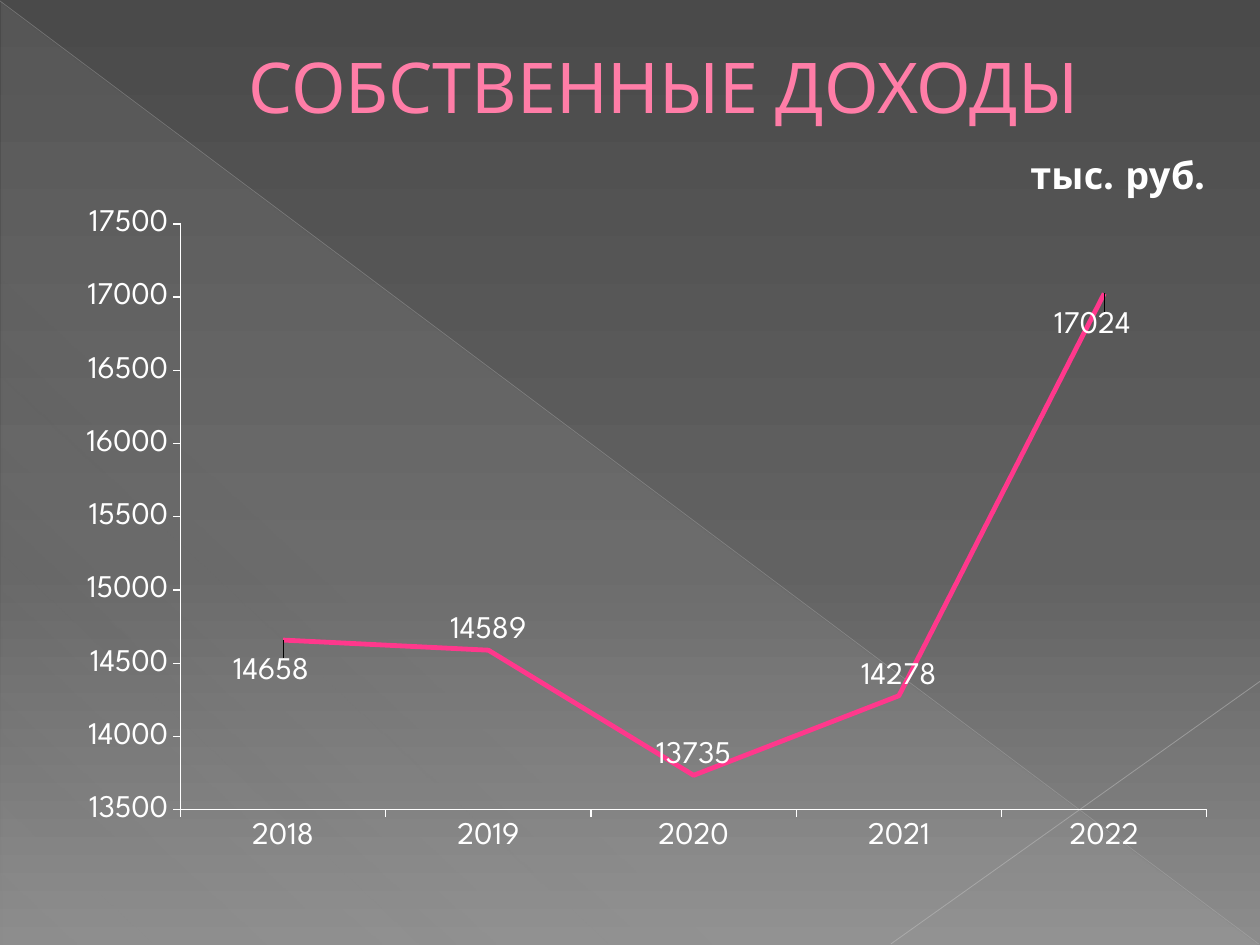
from lxml.etree import SubElement
from pptx import Presentation
from pptx.chart.data import CategoryChartData
from pptx.dml.color import RGBColor
from pptx.enum.chart import XL_CHART_TYPE, XL_LABEL_POSITION, XL_MARKER_STYLE, XL_TICK_MARK
from pptx.enum.shapes import MSO_CONNECTOR, MSO_SHAPE
from pptx.enum.text import MSO_ANCHOR, PP_ALIGN
from pptx.oxml import parse_xml
from pptx.oxml.ns import nsdecls, qn
from pptx.util import Inches, Pt

FONT = "League Spartan"
WHITE = "FFFFFF"


def color(hex_code):
    return RGBColor.from_string(hex_code)


def chart_layout(**settings):
    """Manual chart layout; settings are its child elements in schema order."""
    children = "".join(f'<c:{tag} val="{val}"/>' for tag, val in settings.items())
    return parse_xml(
        f'<c:layout {nsdecls("c")}><c:manualLayout>{children}</c:manualLayout></c:layout>'
    )


prs = Presentation()
prs.slide_width, prs.slide_height = Inches(10), Inches(7.5)
W, H = prs.slide_width, prs.slide_height
slide = prs.slides.add_slide(prs.slide_layouts[5])
shapes = slide.shapes

# Background: gradients and the three thin decorations
backdrop = slide.background.fill
wedge = shapes.add_shape(
    MSO_SHAPE.RIGHT_TRIANGLE, int(W * 0.001), int(H * 0.003), int(W * 0.998), int(H * 0.997)
)
wedge.shadow.inherit = False
wedge.line.fill.background()
gradients = [
    (backdrop, slide.element, 270, [(0, "4A4A4A", 100), (60, "626262", 100), (100, "8C8C8C", 100)]),
    (wedge.fill, wedge.element, 227, [(0, "D2D2D2", 10), (70, "D2D2D2", 8), (100, "D2D2D2", 1)]),
]
for fill, owner, angle, stops in gradients:
    fill.gradient()
    fill.gradient_angle = angle
    stop_list = next(owner.iter(qn("a:gsLst")))
    for old_stop in list(stop_list):
        stop_list.remove(old_stop)
    for position, hex_code, opacity in stops:
        stop = SubElement(stop_list, qn("a:gs"), pos=str(position * 1000))
        tone = SubElement(stop, qn("a:srgbClr"), val=hex_code)
        SubElement(tone, qn("a:alpha"), val=str(opacity * 1000))

diagonals = [
    (0, 0.001, 0.999, 0.999, "BFBFBF", 0.39, 35),
    (1, 0.721, 0.707, 0.999, "C6C6C6", 0.47, 45),
]
for x1, y1, x2, y2, hex_code, width, opacity in diagonals:
    diagonal = shapes.add_connector(
        MSO_CONNECTOR.STRAIGHT, int(W * x1), int(H * y1), int(W * x2), int(H * y2)
    )
    diagonal.line.color.rgb = color(hex_code)
    diagonal.line.width = Pt(width)
    tone = next(diagonal.element.spPr.iter(qn("a:srgbClr")))
    SubElement(tone, qn("a:alpha"), val=str(opacity * 1000))
    SubElement(diagonal.element.spPr, qn("a:effectLst"))

# Heading
heading = shapes.title
heading.left, heading.top = int(W * 0.05), int(H * 0.039)
heading.width, heading.height = int(W * 0.9), int(H * 0.104)
heading.text_frame.vertical_anchor = MSO_ANCHOR.MIDDLE
heading_line = heading.text_frame.paragraphs[0]
heading_line.alignment = PP_ALIGN.CENTER
heading_line._p.get_or_add_pPr().set("marL", str(Inches(0.53)))
heading_run = heading_line.add_run()
heading_run.text = "СОБСТВЕННЫЕ ДОХОДЫ"
heading_run.font.name = FONT
heading_run.font.size = Pt(40)
heading_run.font.color.rgb = color("FF7DA7")
heading_run._r.get_or_add_rPr().insert(0, parse_xml(
    f'<a:ln {nsdecls("a")} w="{Pt(0.5)}"><a:solidFill><a:srgbClr val="B12761"/></a:solidFill></a:ln>'
))

# Income chart
income = CategoryChartData(number_format="General")
income.categories = ["2018", "2019", "2020", "2021", "2022"]
income.add_series("Series 1", [14658, 14589, 13735, 14278, 17024])
chart = shapes.add_chart(
    XL_CHART_TYPE.LINE, int(W * 0.028), int(H * 0.153), int(W * 0.945), int(H * 0.777), income
).chart
chart.has_legend = False
chart.font.name = FONT
chart.font.size = Pt(18)
chart.font.color.rgb = color(WHITE)

chart.has_title = True
unit = chart.chart_title.text_frame.paragraphs[0]
unit.text = "тыс. руб."
unit.font.name = FONT
unit.font.size = Pt(21.6)
unit.font.bold = True
unit.font.color.rgb = color(WHITE)
chart.chart_title.include_in_layout = False
title_element = chart.chart_title._element
for old_layout in title_element.findall(qn("c:layout")):
    title_element.remove(old_layout)
title_element.find(qn("c:tx")).addnext(
    chart_layout(xMode="edge", yMode="edge", x=0.83, y=0.01)
)

plot = chart.plots[0]
plot.vary_by_categories = False
plot_area = next(chart.element.iter(qn("c:plotArea")))
for old_layout in plot_area.findall(qn("c:layout")):
    plot_area.remove(old_layout)
plot_area.insert(0, chart_layout(
    layoutTarget="inner", xMode="edge", yMode="edge", x=0.122, y=0.108, w=0.862, h=0.798
))

for axis in (chart.category_axis, chart.value_axis):
    axis.has_major_gridlines = False
    axis.major_tick_mark = XL_TICK_MARK.OUTSIDE
    axis.minor_tick_mark = XL_TICK_MARK.NONE
    axis.format.line.color.rgb = color(WHITE)
    axis.format.line.width = Pt(0.75)
chart.value_axis.minimum_scale = 13500
chart.value_axis.maximum_scale = 17500
chart.value_axis.major_unit = 500

series = plot.series[0]
series.smooth = False
series.marker.style = XL_MARKER_STYLE.NONE
series.format.line.color.rgb = color("FF388C")
series.format.line.width = Pt(2.75)
series.data_labels.show_value = True
series.data_labels.position = XL_LABEL_POSITION.ABOVE

# The first and last values sit below their points
for point in (0, 4):
    series.points[point].data_label.position = XL_LABEL_POSITION.ABOVE
for label in chart.element.iter(qn("c:dLbl")):
    label.find(qn("c:idx")).addnext(chart_layout(x=-0.01, y=0.07))

prs.save("out.pptx")
